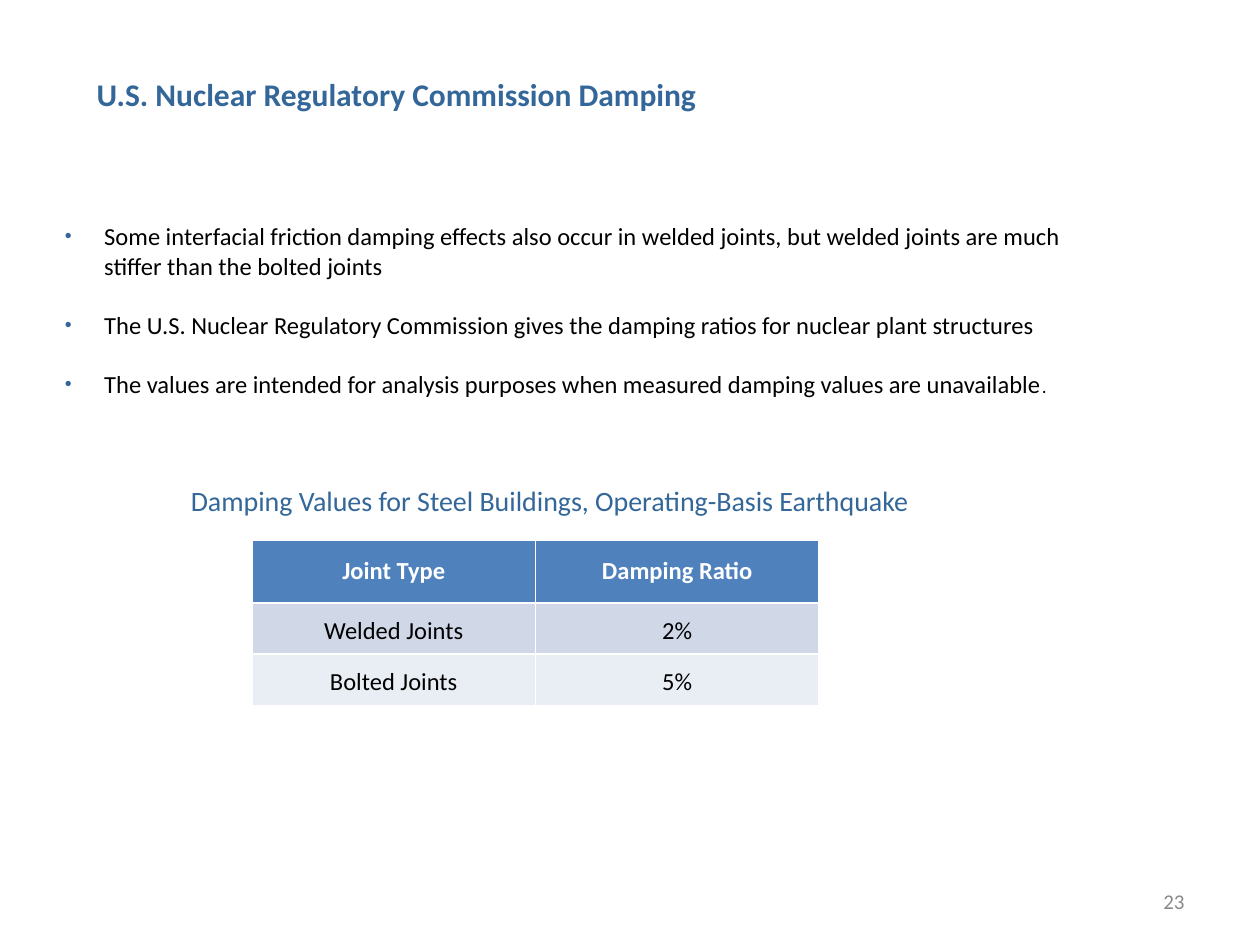
from dataclasses import dataclass

from lxml import etree
from pptx import Presentation
from pptx.dml.color import RGBColor
from pptx.enum.text import MSO_ANCHOR, MSO_AUTO_SIZE, PP_ALIGN
from pptx.oxml.ns import qn
from pptx.util import Pt

LEFT, CENTER, RIGHT = PP_ALIGN.LEFT, PP_ALIGN.CENTER, PP_ALIGN.RIGHT
TOP, MIDDLE = MSO_ANCHOR.TOP, MSO_ANCHOR.MIDDLE
NO_AUTOFIT = MSO_AUTO_SIZE.NONE
TITLE_ONLY = 5


@dataclass(frozen=True)
class Theme:
    """Colours, fonts and type sizes of the slide."""
    font: str = "Calibri"
    period_font: str = "Arial"
    accent: str = "336699"
    text: str = "000000"
    white: str = "FFFFFF"
    muted: str = "898989"
    header_fill: str = "4F81BD"
    row_fills: tuple = ("D0D8E8", "E9EDF4")
    title_size: int = 18
    caption_size: int = 16
    body_size: int = 14
    number_size: int = 12
    period_size: int = 11


class SlideBuilder:
    """Draws styled elements on the current slide."""

    def __init__(self, slide, theme):
        """Keep the slide and its theme."""
        self.slide = slide
        self.theme = theme

    def style(self, paragraph, size, color, align=LEFT, bold=False):
        """Format a whole paragraph."""
        paragraph.alignment = align
        font = paragraph.font
        font.name, font.size, font.bold = self.theme.font, Pt(size), bold
        font.color.rgb = RGBColor.from_string(color)

    def title(self, text, left, top, width, height):
        """Place and format the title placeholder."""
        shape = self.slide.shapes.title
        shape.left, shape.top, shape.width, shape.height = map(Pt, (left, top, width, height))
        frame = shape.text_frame
        frame.text = text
        frame.auto_size, frame.vertical_anchor = NO_AUTOFIT, TOP
        self.style(frame.paragraphs[0], self.theme.title_size, self.theme.accent, bold=True)

    def text_box(self, left, top, width, height, anchor=TOP):
        """Add a wrapping text box and return its frame."""
        shape = self.slide.shapes.add_textbox(*map(Pt, (left, top, width, height)))
        frame = shape.text_frame
        frame.word_wrap, frame.vertical_anchor = True, anchor
        return frame

    def label(self, text, box, size, color, align=LEFT, anchor=TOP, spacing=1.0):
        """Add a single-paragraph text."""
        paragraph = self.text_box(*box, anchor).paragraphs[0]
        paragraph.text = text
        paragraph.line_spacing = spacing
        self.style(paragraph, size, color, align)

    def add_bullet(self, paragraph, indent):
        """Give a paragraph a coloured bullet and a hanging indent."""
        properties = paragraph._p.get_or_add_pPr()
        properties.set("marL", str(Pt(indent)))
        properties.set("indent", str(-Pt(indent)))
        color = etree.SubElement(properties, qn("a:buClr"))
        etree.SubElement(color, qn("a:srgbClr"), val=self.theme.accent)
        etree.SubElement(properties, qn("a:buSzPct"), val="80000")
        etree.SubElement(properties, qn("a:buFont"), typeface="Arial")
        etree.SubElement(properties, qn("a:buChar"), char="•")

    def bullets(self, items, box, indent, gap):
        """Add a bulleted list and return its paragraphs."""
        frame = self.text_box(*box, MIDDLE)
        for index, item in enumerate(items):
            paragraph = frame.add_paragraph() if index else frame.paragraphs[0]
            paragraph.text = item
            self.add_bullet(paragraph, indent)
            paragraph.space_before = Pt(gap if index else 0)
            self.style(paragraph, self.theme.body_size, self.theme.text)
        return frame.paragraphs

    def table(self, rows, left, top, column_width, row_heights):
        """Add a table with a header row and alternating fills."""
        theme = self.theme
        columns = len(rows[0])
        size = column_width * columns, sum(row_heights)
        table = self.slide.shapes.add_table(
            len(rows), columns, *map(Pt, (left, top, *size))).table
        for column in table.columns:
            column.width = Pt(column_width)
        for index, (values, height) in enumerate(zip(rows, row_heights)):
            header = index == 0
            table.rows[index].height = Pt(height)
            fill = theme.header_fill if header else theme.row_fills[(index - 1) % 2]
            for cell, value in zip(table.rows[index].cells, values):
                cell.text = value
                cell.vertical_anchor = MIDDLE
                cell.fill.solid()
                cell.fill.fore_color.rgb = RGBColor.from_string(fill)
                paragraph = cell.text_frame.paragraphs[0]
                if not header:
                    cell.margin_left = cell.margin_right = Pt(5)
                    cell.margin_top = cell.margin_bottom = 0
                    paragraph.line_spacing = 1.15
                self.style(paragraph, theme.body_size,
                           theme.white if header else theme.text, CENTER, header)


def main():
    """Build the slide and save it."""
    presentation = Presentation()
    presentation.slide_width, presentation.slide_height = Pt(720), Pt(540)
    slide = presentation.slides.add_slide(presentation.slide_layouts[TITLE_ONLY])
    theme = Theme()
    builder = SlideBuilder(slide, theme)

    builder.title("U.S. Nuclear Regulatory Commission Damping", 48, 39, 498, 51)
    paragraphs = builder.bullets(
        ["Some interfacial friction damping effects also occur in welded joints, "
         "but welded joints are much stiffer than the bolted joints",
         "The U.S. Nuclear Regulatory Commission gives the damping ratios "
         "for nuclear plant structures",
         "The values are intended for analysis purposes when measured damping "
         "values are unavailable"],
        (30, 122.5, 618, 109), indent=22.5, gap=17)
    period = paragraphs[-1].add_run()
    period.text = "."
    period.font.name, period.font.size = theme.period_font, Pt(theme.period_size)

    builder.label("Damping Values for Steel Buildings, Operating-Basis Earthquake",
                  (102, 270, 432, 28), theme.caption_size, theme.accent, spacing=1.15)
    builder.table([("Joint Type", "Damping Ratio"),
                   ("Welded Joints", "2%"),
                   ("Bolted Joints", "5%")],
                  144, 308.5, 162, (36, 29.3, 29.3))
    builder.label("23", (516, 500.5, 168, 28.75), theme.number_size, theme.muted, RIGHT, MIDDLE)
    presentation.save("out.pptx")


if __name__ == "__main__":
    main()
